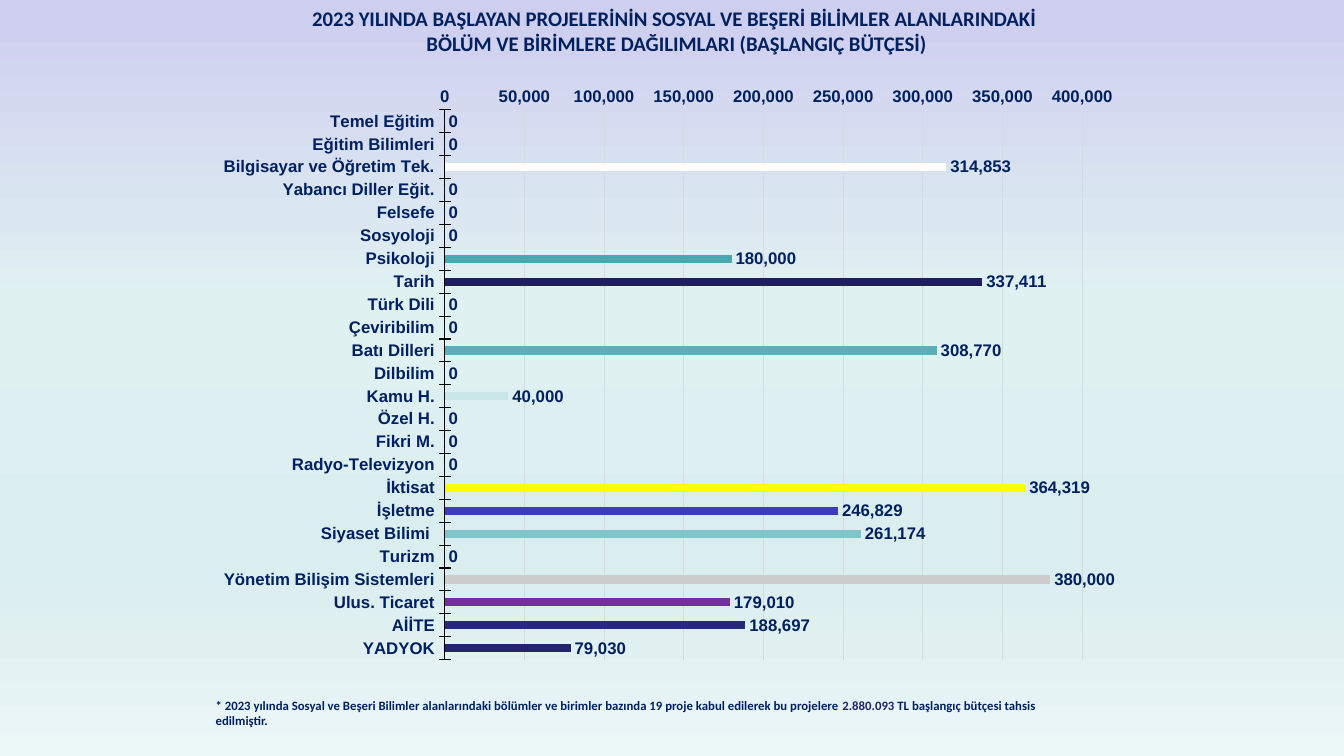
from lxml.etree import SubElement
from pptx import Presentation
from pptx.chart.data import CategoryChartData as Data
from pptx.dml.color import RGBColor as RGB
from pptx.enum.chart import XL_CHART_TYPE as Kind, XL_LABEL_POSITION as Spot, XL_TICK_MARK as Tick
from pptx.enum.text import PP_ALIGN as Align
from pptx.oxml import parse_xml
from pptx.oxml.ns import nsdecls, qn
from pptx.util import Inches, Pt

NAVY = RGB(0x00, 0x20, 0x60)
INK = RGB(0x22, 0x22, 0x67)
BLACK = RGB(0x00, 0x00, 0x00)
WHITE = RGB(0xFF, 0xFF, 0xFF)
GRID = RGB(0xD9, 0xD9, 0xD9)
TEAL = RGB(0x48, 0xA8, 0xB0)
SEA = RGB(0x5A, 0xAF, 0xB8)
AQUA = RGB(0x80, 0xC5, 0xCB)
ICE = RGB(0xC9, 0xE6, 0xE9)
NIGHT = RGB(0x1F, 0x1F, 0x5C)
DUSK = RGB(0x24, 0x24, 0x6E)
INDIGO = RGB(0x29, 0x29, 0x7A)
BLUE = RGB(0x3D, 0x3D, 0xBB)
YELLOW = RGB(0xFF, 0xFF, 0x00)
SILVER = RGB(0xCC, 0xCC, 0xCC)
PURPLE = RGB(0x70, 0x30, 0xA0)
SKY = [
    (1, RGB(0xCE, 0xCE, 0xEF)),
    (40, RGB(0xE0, 0xF1, 0xF2)),
    (74, RGB(0xDA, 0xED, 0xEF)),
    (100, RGB(0xEB, 0xF6, 0xF7)),
]

TITLE = [
    [("2023 YILINDA BAŞLAYAN PROJELERİNİN SOSYAL VE BEŞERİ BİLİMLER ALANLARINDAKİ ", NAVY)],
    [("BÖLÜM VE BİRİMLERE DAĞILIMLARI (BAŞLANGIÇ BÜTÇESİ)", NAVY)],
]
NOTE = [[
    ("* 2023 yılında Sosyal ve Beşeri Bilimler alanlarındaki bölümler ve birimler "
     "bazında 19 proje kabul edilerek bu projelere ", NAVY),
    ("2.880.093 ", INK),
    ("TL başlangıç bütçesi tahsis edilmiştir.", NAVY),
]]
UNITS = [
    ("Temel Eğitim", 0, None),
    ("Eğitim Bilimleri", 0, None),
    ("Bilgisayar ve Öğretim Tek.", 314853, WHITE),
    ("Yabancı Diller Eğit.", 0, None),
    ("Felsefe", 0, None),
    ("Sosyoloji", 0, None),
    ("Psikoloji", 180000, TEAL),
    ("Tarih", 337411, NIGHT),
    ("Türk Dili", 0, None),
    ("Çeviribilim", 0, None),
    ("Batı Dilleri", 308770, SEA),
    ("Dilbilim", 0, None),
    ("Kamu H.", 40000, ICE),
    ("Özel H.", 0, None),
    ("Fikri M.", 0, None),
    ("Radyo-Televizyon", 0, None),
    ("İktisat", 364319, YELLOW),
    ("İşletme", 246829, BLUE),
    ("Siyaset Bilimi ", 261174, AQUA),
    ("Turizm", 0, None),
    ("Yönetim Bilişim Sistemleri", 380000, SILVER),
    ("Ulus. Ticaret", 179010, PURPLE),
    ("AİİTE", 188697, INDIGO),
    ("YADYOK", 79030, DUSK),
]
TITLE_BOX = (2.19, 0.01, 9.04, 0.6)
NOTE_BOX = (2.04, 6.87, 8.78, 0.4)
CHART_BOX = (2.04, 0.76, 9.19, 5.91)
PLOT = {"x": 0.258, "y": 0.056, "w": 0.688, "h": 0.923}
MONEY = "#,##0"


def style(font, size, color, name="Arial"):
    font.size, font.name, font.bold = Pt(size), name, True
    font.color.rgb = color


def text(slide, lines, box, size, align=Align.LEFT):
    frame = slide.shapes.add_textbox(*map(Inches, box)).text_frame
    frame.word_wrap = True
    for i, line in enumerate(lines):
        para = frame.paragraphs[0] if i == 0 else frame.add_paragraph()
        para.alignment = align
        for words, color in line:
            run = para.add_run()
            run.text = words
            style(run.font, size, color, "Calibri")


def paint(slide):
    fill = slide.background.fill
    fill.gradient()
    fill.gradient_angle = 270
    stops = slide.background._cSld.find(".//" + qn("a:gsLst"))
    for stop in list(stops):
        stops.remove(stop)
    for share, color in SKY:
        stop = SubElement(stops, qn("a:gs"), pos=str(share * 1000))
        SubElement(stop, qn("a:srgbClr"), val=str(color))


def place(chart):
    area = chart._chartSpace.chart.plotArea
    for old in area.findall(qn("c:layout")):
        area.remove(old)
    edges = "".join(f'<c:{k} val="{v}"/>' for k, v in PLOT.items())
    area.insert(0, parse_xml(
        f'<c:layout {nsdecls("c")}><c:manualLayout><c:layoutTarget val="inner"/>'
        f'<c:xMode val="edge"/><c:yMode val="edge"/>{edges}</c:manualLayout></c:layout>'))


def draw(slide):
    data = Data(number_format=MONEY)
    data.categories = [name for name, _, _ in UNITS]
    data.add_series("Series 1", [value for _, value, _ in UNITS])
    chart = slide.shapes.add_chart(
        Kind.BAR_CLUSTERED, *map(Inches, CHART_BOX), data).chart
    chart.has_legend = chart.has_title = False
    style(chart.font, 10, NAVY)
    place(chart)

    units, sums = chart.category_axis, chart.value_axis
    for axis in (units, sums):
        style(axis.tick_labels.font, 12, NAVY)
        axis.minor_tick_mark = Tick.NONE
    units.reverse_order = True
    units.major_tick_mark = Tick.CROSS
    units.format.line.color.rgb = BLACK
    units.format.line.width = Pt(0.75)
    sums.major_tick_mark = Tick.NONE
    sums.minimum_scale, sums.maximum_scale, sums.major_unit = 0, 400000, 50000
    sums.tick_labels.number_format = MONEY
    sums.tick_labels.number_format_is_linked = False
    sums.format.line.fill.background()
    sums.major_gridlines.format.line.color.rgb = GRID
    sums.major_gridlines.format.line.width = Pt(0.75)

    plot = chart.plots[0]
    plot.gap_width, plot.vary_by_categories = 182, False
    bars = plot.series[0]
    bars.invert_if_negative = False
    for i, (_, _, color) in enumerate(UNITS):
        if color is not None:
            fill = bars.points[i].format.fill
            fill.solid()
            fill.fore_color.rgb = color
    labels = bars.data_labels
    labels.show_value = True
    labels.position = Spot.OUTSIDE_END
    labels.number_format, labels.number_format_is_linked = MONEY, False
    style(labels.font, 12, NAVY)


def main():
    deck = Presentation()
    deck.slide_width, deck.slide_height = Inches(13.33), Inches(7.5)
    slide = deck.slides.add_slide(deck.slide_layouts[6])
    paint(slide)
    text(slide, TITLE, TITLE_BOX, 14.8, align=Align.CENTER)
    text(slide, NOTE, NOTE_BOX, 9.1)
    draw(slide)
    deck.save("out.pptx")


if __name__ == "__main__":
    main()
